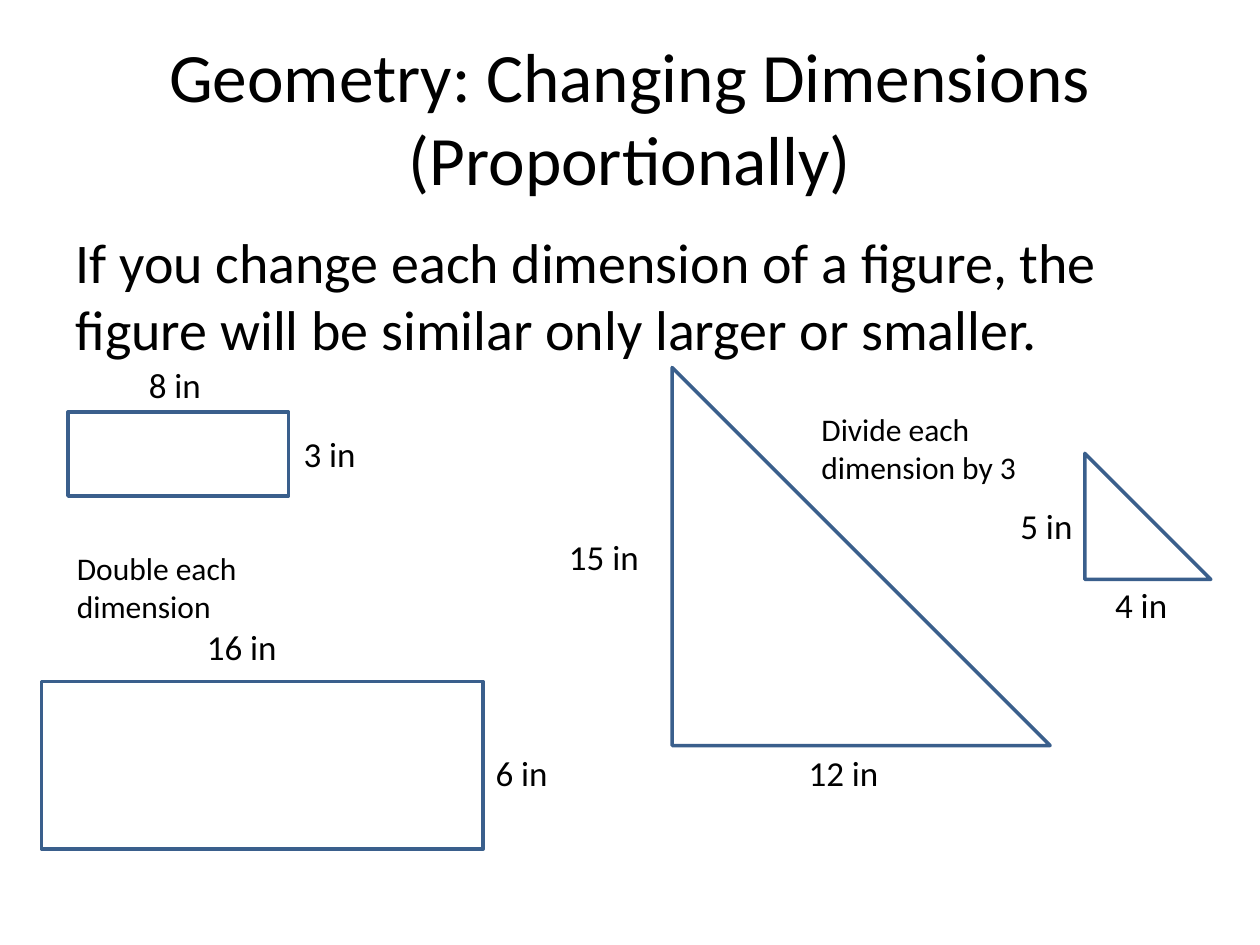
from pptx import Presentation
from pptx.dml.color import RGBColor
from pptx.enum.shapes import MSO_SHAPE
from pptx.enum.text import MSO_ANCHOR, MSO_AUTO_SIZE, PP_ALIGN
from pptx.util import Cm, Pt

COLORS = {"text": "000000", "fill": "FFFFFF", "line": "3A5F8C"}


def place(shape, left, top, width, height):
    shape.left, shape.top = Cm(left), Cm(top)
    shape.width, shape.height = Cm(width), Cm(height)


def write(shape, text, size):
    """Put one run into the first paragraph and return that paragraph."""
    frame = shape.text_frame
    frame.word_wrap = True
    para = frame.paragraphs[0]
    run = para.add_run()
    run.text = text
    run.font.name = "Calibri"
    run.font.size = Pt(size)
    run.font.color.rgb = RGBColor.from_string(COLORS["text"])
    return para


deck = Presentation()
deck.slide_width, deck.slide_height = Cm(25.4), Cm(19.05)
slide = deck.slides.add_slide(deck.slide_layouts[1])

# Title and rule
title, body = slide.placeholders
place(title, 1.27, 0.76, 22.86, 3.18)
para = write(title, "Geometry: Changing Dimensions (Proportionally)", 39.6)
para.alignment = PP_ALIGN.CENTER
title.text_frame.vertical_anchor = MSO_ANCHOR.MIDDLE
title.text_frame.auto_size = MSO_AUTO_SIZE.NONE

place(body, 1.27, 4.45, 22.86, 12.57)
para = write(body, "If you change each dimension of a figure, the "
             "figure will be similar only larger or smaller.", 32)
body.text_frame.auto_size = MSO_AUTO_SIZE.NONE
props = para._p.get_or_add_pPr()
props.set("marL", "0")
props.set("indent", "0")
props.insert_element_before(props.makeelement(
    "{http://schemas.openxmlformats.org/drawingml/2006/main}buNone", {}),
    "a:tabLst", "a:defRPr", "a:extLst")

# Pairs of similar figures: kind, left, top, base width, base height, scale
rect, wedge = MSO_SHAPE.RECTANGLE, MSO_SHAPE.RIGHT_TRIANGLE
figures = [
    (rect, 0.84, 13.74, 4.45, 1.69, 2),
    (rect, 1.37, 8.31, 4.45, 1.69, 1),
    (wedge, 13.55, 7.41, 2.54, 2.54, 3),
    (wedge, 21.87, 9.14, 2.54, 2.54, 1),
]
for kind, left, top, width, height, scale in figures:
    shape = slide.shapes.add_shape(
        kind, Cm(left), Cm(top), Cm(width * scale), Cm(height * scale))
    shape.shadow.inherit = False
    shape.fill.solid()
    shape.fill.fore_color.rgb = RGBColor.from_string(COLORS["fill"])
    shape.line.color.rgb = RGBColor.from_string(COLORS["line"])
    shape.line.width = Pt(2)

# Steps and side lengths: text, left, top, then box width, height, font size
step, side = (5.5, 1.8, 18), (2.33, 1.11, 20)
labels = [
    ("Double each dimension", 1.3, 10.95, step),
    ("Divide each dimension by 3", 16.31, 8.15, step),
    ("3 in", 5.87, 8.59, side),
    ("8 in", 2.75, 7.2, side),
    ("6 in", 9.74, 15.03, side),
    ("16 in", 3.92, 12.49, side),
    ("5 in", 20.32, 10.05, side),
    ("12 in", 16.05, 15.03, side),
    ("4 in", 22.23, 11.64, side),
    ("15 in", 11.22, 10.67, side),
]
for text, left, top, (width, height, size) in labels:
    box = slide.shapes.add_textbox(Cm(left), Cm(top), Cm(width), Cm(height))
    write(box, text, size)
    box.text_frame.auto_size = MSO_AUTO_SIZE.SHAPE_TO_FIT_TEXT

deck.save("out.pptx")
